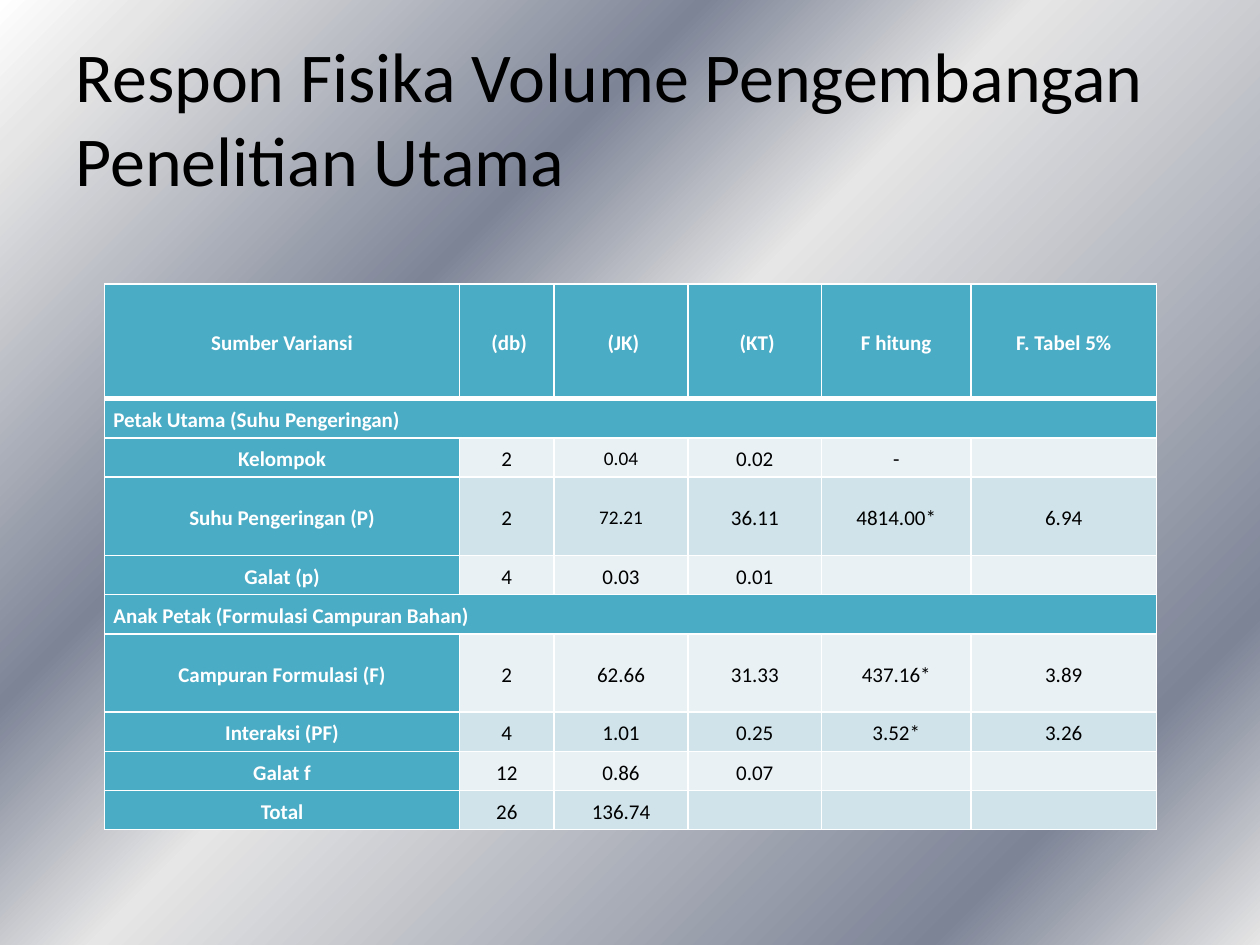
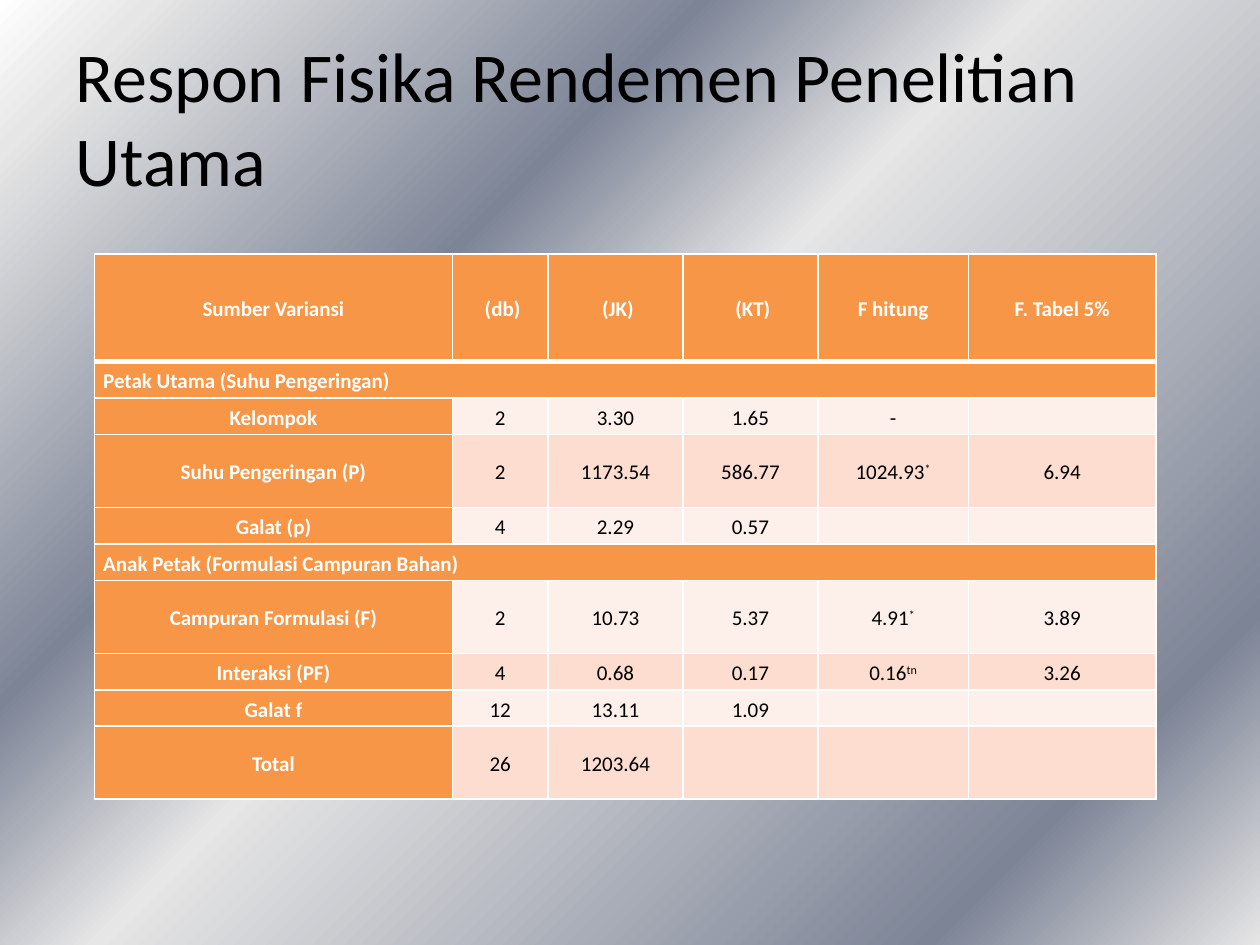
from lxml import etree
from pptx import Presentation
from pptx.dml.color import RGBColor
from pptx.enum import text as enums
from pptx.oxml.ns import qn
from pptx.util import Pt

WHITE = RGBColor(0xFF, 0xFF, 0xFF)
BLACK = RGBColor(0x00, 0x00, 0x00)
SILVER = RGBColor(0xE6, 0xE6, 0xE6)
SLATE = RGBColor(0x7D, 0x84, 0x96)
TEAL = RGBColor(0x4B, 0xAC, 0xC6)
TEAL_LIGHT = RGBColor(0xE9, 0xF1, 0xF5)
TEAL_MEDIUM = RGBColor(0xD0, 0xE3, 0xEA)
ORANGE = RGBColor(0xF7, 0x96, 0x46)
ORANGE_LIGHT = RGBColor(0xFD, 0xEF, 0xE9)
ORANGE_MEDIUM = RGBColor(0xFC, 0xDD, 0xCF)

FONT = "Calibri"
BACKGROUND_STOPS = [(0, WHITE), (7, SILVER), (32, SLATE), (47, SILVER), (85, SLATE), (100, SILVER)]
COLUMN_SHARES = [202.3, 54, 76.3, 76.3, 85, 106]
HEADER = ["Sumber Variansi", " (db)", " (JK)", " (KT)", "F hitung", "F. Tabel 5%"]
MAIN_PLOT = "Petak Utama (Suhu Pengeringan)"
SUB_PLOT = "Anak Petak (Formulasi Campuran Bahan)"

SLIDES = [
    {
        "title": "Respon Fisika Volume Pengembangan Penelitian Utama",
        "left": 59.8, "top": 162.2, "width": 601.2,
        "header_height": 65.6, "row_height": 22.4,
        "colours": (TEAL, TEAL_LIGHT, TEAL_MEDIUM),
        "tall_rows": {"Suhu Pengeringan (P)", "Campuran Formulasi (F)"},
        "small_values": {"0.04", "72.21"},
        "rows": [
            HEADER,
            [MAIN_PLOT],
            ["Kelompok", "2", "0.04", "0.02", "-", ""],
            ["Suhu Pengeringan (P)", "2", "72.21", "36.11", "4814.00*", "6.94"],
            ["Galat (p)", "4", "0.03", "0.01", "", ""],
            [SUB_PLOT],
            ["Campuran Formulasi (F)", "2", "62.66", "31.33", "437.16*", "3.89"],
            ["Interaksi (PF)", "4", "1.01", "0.25", "3.52*", "3.26"],
            ["Galat f", "12", "0.86", "0.07", "", ""],
            ["Total", "26", "136.74", "", "", ""],
        ],
    },
    {
        "title": "Respon Fisika Rendemen Penelitian Utama",
        "left": 54, "top": 145.2, "width": 606.6,
        "header_height": 61.4, "row_height": 20.85,
        "colours": (ORANGE, ORANGE_LIGHT, ORANGE_MEDIUM),
        "tall_rows": {"Suhu Pengeringan (P)", "Campuran Formulasi (F)", "Total"},
        "small_values": set(),
        "rows": [
            HEADER,
            [MAIN_PLOT],
            ["Kelompok", "2", "3.30", "1.65", "-", ""],
            ["Suhu Pengeringan (P)", "2", "1173.54", "586.77", "1024.93^*", "6.94"],
            ["Galat (p)", "4", "2.29", "0.57", "", ""],
            [SUB_PLOT],
            ["Campuran Formulasi (F)", "2", "10.73", "5.37", "4.91^*", "3.89"],
            ["Interaksi (PF)", "4", "0.68", "0.17", "0.16^tn", "3.26"],
            ["Galat f", "12", "13.11", "1.09", "", ""],
            ["Total", "26", "1203.64", "", "", ""],
        ],
    },
]


def paint_background(master):
    fill = master.background.fill
    fill.gradient()
    fill.gradient_angle = 315
    stops = master.element.xpath("./p:cSld/p:bg//a:gsLst")[0]
    for stop in list(stops):
        stops.remove(stop)
    for position, colour in BACKGROUND_STOPS:
        stop = etree.SubElement(stops, qn("a:gs"), pos=str(position * 1000))
        etree.SubElement(stop, qn("a:srgbClr"), val=str(colour))


def write_text(frame, content, size=12, colour=BLACK, bold=False, centred=True, spacing=None):
    paragraph = frame.paragraphs[0]
    paragraph.alignment = enums.PP_ALIGN.CENTER if centred else enums.PP_ALIGN.LEFT
    paragraph.line_spacing = spacing
    if not content:
        etree.SubElement(paragraph._p, qn("a:endParaRPr"), sz=str(size * 100))
        return
    for index, part in enumerate(content.split("^")):
        run = paragraph.add_run()
        run.text = part
        run.font.name = FONT
        run.font.size = Pt(size)
        run.font.bold = bold
        run.font.color.rgb = colour
        if index:
            run.font._element.set("baseline", "30000")


def draw_borders(cell, row):
    properties = cell._tc.get_or_add_tcPr()
    widths = {"L": 1, "R": 1, "T": 3 if row == 1 else 1, "B": 3 if row == 0 else 1}
    for side, width in widths.items():
        line = etree.SubElement(properties, qn(f"a:ln{side}"), w=str(Pt(width)))
        fill = etree.SubElement(line, qn("a:solidFill"))
        etree.SubElement(fill, qn("a:srgbClr"), val=str(WHITE))


def add_variance_table(slide, content):
    rows = content["rows"]
    strong, light, medium = content["colours"]
    single = content["row_height"]
    heights = [content["header_height"]]
    heights += [single * (2 if row[0] in content["tall_rows"] else 1) for row in rows[1:]]
    table = slide.shapes.add_table(
        len(rows), len(HEADER), Pt(content["left"]), Pt(content["top"]),
        Pt(content["width"]), Pt(sum(heights))).table
    table.first_row = table.horz_banding = False
    for column, share in zip(table.columns, COLUMN_SHARES):
        column.width = Pt(content["width"] * share / sum(COLUMN_SHARES))
    for row_index, values in enumerate(rows):
        table.rows[row_index].height = Pt(heights[row_index])
        section = len(values) == 1
        for column_index in range(len(HEADER)):
            value = values[column_index] if column_index < len(values) else ""
            cell = table.cell(row_index, column_index)
            heading = section or row_index == 0 or column_index == 0
            cell.margin_left = cell.margin_right = Pt(5)
            cell.margin_top = cell.margin_bottom = 0
            cell.vertical_anchor = enums.MSO_ANCHOR.MIDDLE
            draw_borders(cell, row_index)
            cell.fill.solid()
            cell.fill.fore_color.rgb = strong if heading else medium if row_index % 2 else light
            write_text(cell.text_frame, value,
                       size=11 if value in content["small_values"] else 12,
                       colour=WHITE if heading else BLACK,
                       bold=heading, centred=not section, spacing=1.15)
        if section:
            table.cell(row_index, 0).merge(table.cell(row_index, len(HEADER) - 1))


def add_title(slide, content):
    title = slide.shapes.title
    title.left, title.top, title.width, title.height = Pt(36), Pt(21.6), Pt(648), Pt(90)
    frame = title.text_frame
    frame.auto_size = enums.MSO_AUTO_SIZE.NONE
    frame.vertical_anchor = enums.MSO_ANCHOR.MIDDLE
    write_text(frame, content, size=40, centred=False)


def main():
    presentation = Presentation()
    presentation.slide_width, presentation.slide_height = Pt(720), Pt(540)
    paint_background(presentation.slide_master)
    for content in SLIDES:
        slide = presentation.slides.add_slide(presentation.slide_layouts[5])
        add_title(slide, content["title"])
        add_variance_table(slide, content)
    presentation.save("out.pptx")


if __name__ == "__main__":
    main()
